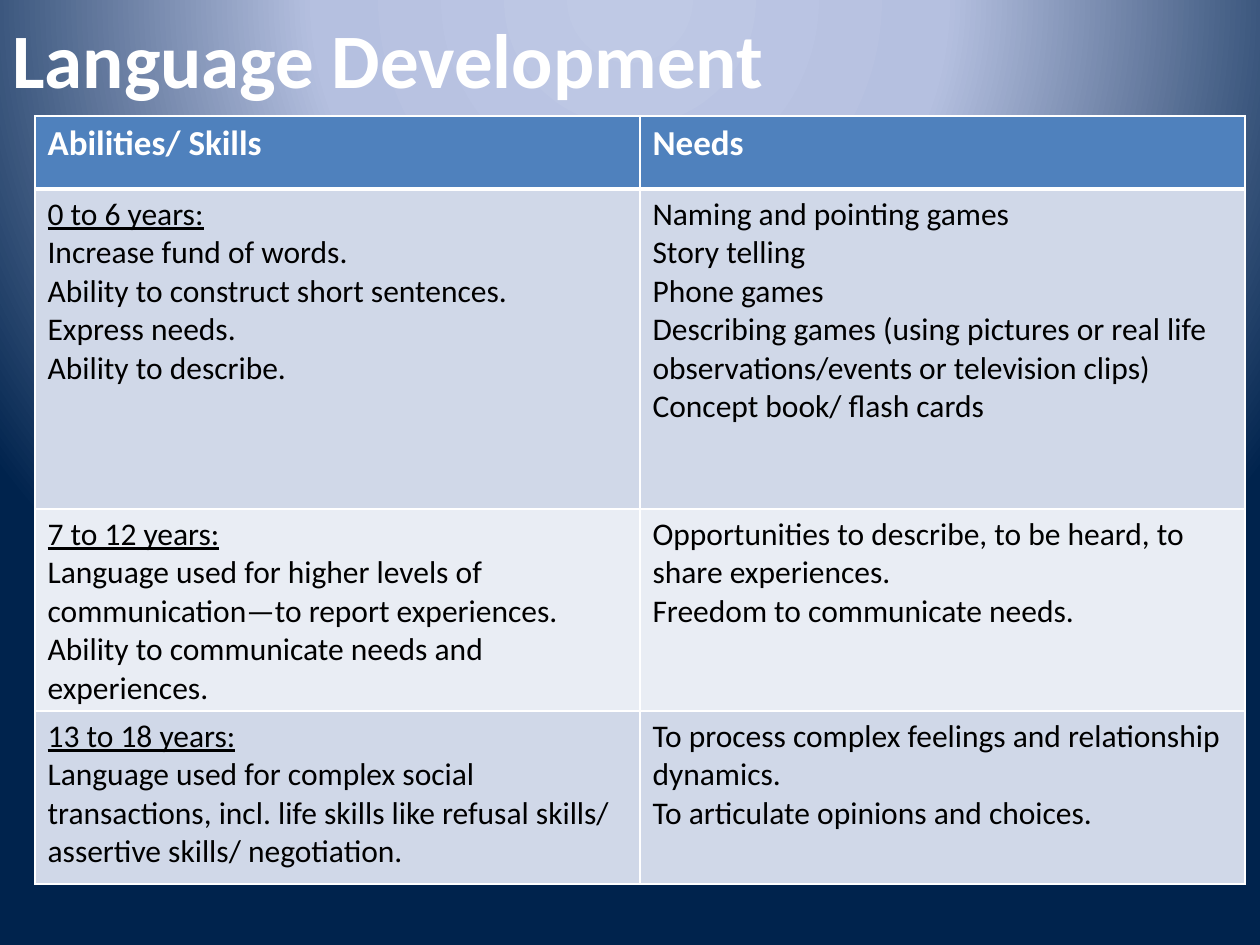
import lxml.etree
import pptx
import pptx.dml.color
import pptx.enum.text
import pptx.oxml.ns
import pptx.util

PX = 914400 // 126
FONT = "Calibri"
COLORS = {
    "glow": "BFC9E5",
    "haze": "B5C0E0",
    "navy": "00234D",
    "white": "FFFFFF",
    "black": "000000",
    "header": "4F81BD",
    "band": "D0D8E8",
    "light": "E9EDF4",
}
COLUMN_WIDTHS = [605, 605]
ROW_HEIGHTS = [73, 320, 202, 173]
ROWS = [
    (["Abilities/ Skills"], ["Needs"]),
    (
        ["0 to 6 years:", "Increase fund of words.", "Ability to construct short sentences.",
         "Express needs.", "Ability to describe."],
        ["Naming and pointing games", "Story telling", "Phone games",
         "Describing games (using pictures or real life observations/events or television clips)",
         "Concept book/ flash cards"],
    ),
    (
        ["7 to 12 years:",
         "Language used for higher levels of communication—to report experiences.",
         "Ability to communicate needs and experiences."],
        ["Opportunities to describe, to be heard, to share experiences.",
         "Freedom to communicate needs."],
    ),
    (
        ["13 to 18 years:",
         "Language used for complex social transactions, incl. life skills like refusal skills/ "
         "assertive skills/ negotiation."],
        ["To process complex feelings and relationship dynamics.",
         "To articulate opinions and choices."],
    ),
]


def add_xml(parent, tag, **attributes):
    return lxml.etree.SubElement(parent, pptx.oxml.ns.qn(tag), attributes)


def style_text(text_frame, size, color, bold):
    for paragraph in text_frame.paragraphs:
        for run in paragraph.runs:
            run.font.name = FONT
            run.font.size = pptx.util.Pt(size)
            run.font.bold = bold
            run.font.color.rgb = pptx.dml.color.RGBColor.from_string(COLORS[color])


deck = pptx.Presentation()
deck.slide_width = pptx.util.Inches(10)
deck.slide_height = pptx.util.Inches(7.5)
slide = deck.slides.add_slide(deck.slide_layouts[6])

# Background: circular gradient centred above the slide
slide.background.fill.gradient()
gradient = next(slide.element.iter(pptx.oxml.ns.qn("a:gradFill")))
for child in list(gradient):
    gradient.remove(child)
stops = add_xml(gradient, "a:gsLst")
for percent, color in [(0, "glow"), (40, "haze"), (100, "navy")]:
    stop = add_xml(stops, "a:gs", pos=str(percent * 1000))
    add_xml(stop, "a:srgbClr", val=COLORS[color])
circle = add_xml(gradient, "a:path", path="circle")
add_xml(circle, "a:fillToRect", l="50000", t="-80000", r="50000", b="180000")

# Title
title = slide.shapes.add_textbox(0, 0, 1134 * PX, 116 * PX).text_frame
title.word_wrap = True
title.vertical_anchor = pptx.enum.text.MSO_ANCHOR.MIDDLE
title.text = "Language Development"
style_text(title, 44, "white", True)

# Table of skills and needs by age
skills = slide.shapes.add_table(
    len(ROWS), len(COLUMN_WIDTHS), 35 * PX, 116 * PX,
    sum(COLUMN_WIDTHS) * PX, sum(ROW_HEIGHTS) * PX,
).table
for column, width in zip(skills.columns, COLUMN_WIDTHS):
    column.width = width * PX
for row, height in zip(skills.rows, ROW_HEIGHTS):
    row.height = height * PX

for r, contents in enumerate(ROWS):
    is_header = r == 0
    fill = "header" if is_header else ("light", "band")[r % 2]
    for c, lines in enumerate(contents):
        cell = skills.cell(r, c)
        cell.text_frame.text = "\n".join(lines)
        if is_header:
            style_text(cell.text_frame, 20, "white", True)
        else:
            style_text(cell.text_frame, 18, "black", False)
            if c == 0:
                cell.text_frame.paragraphs[0].runs[0].font.underline = True

        properties = cell._tc.get_or_add_tcPr()
        for side in "LRTB":
            is_header_rule = (r, side) in [(0, "B"), (1, "T")]
            points = 3 if is_header_rule else 1
            border = add_xml(properties, f"a:ln{side}", w=str(pptx.util.Pt(points)))
            add_xml(add_xml(border, "a:solidFill"), "a:srgbClr", val=COLORS["white"])
        cell.fill.solid()
        cell.fill.fore_color.rgb = pptx.dml.color.RGBColor.from_string(COLORS[fill])

deck.save("out.pptx")
